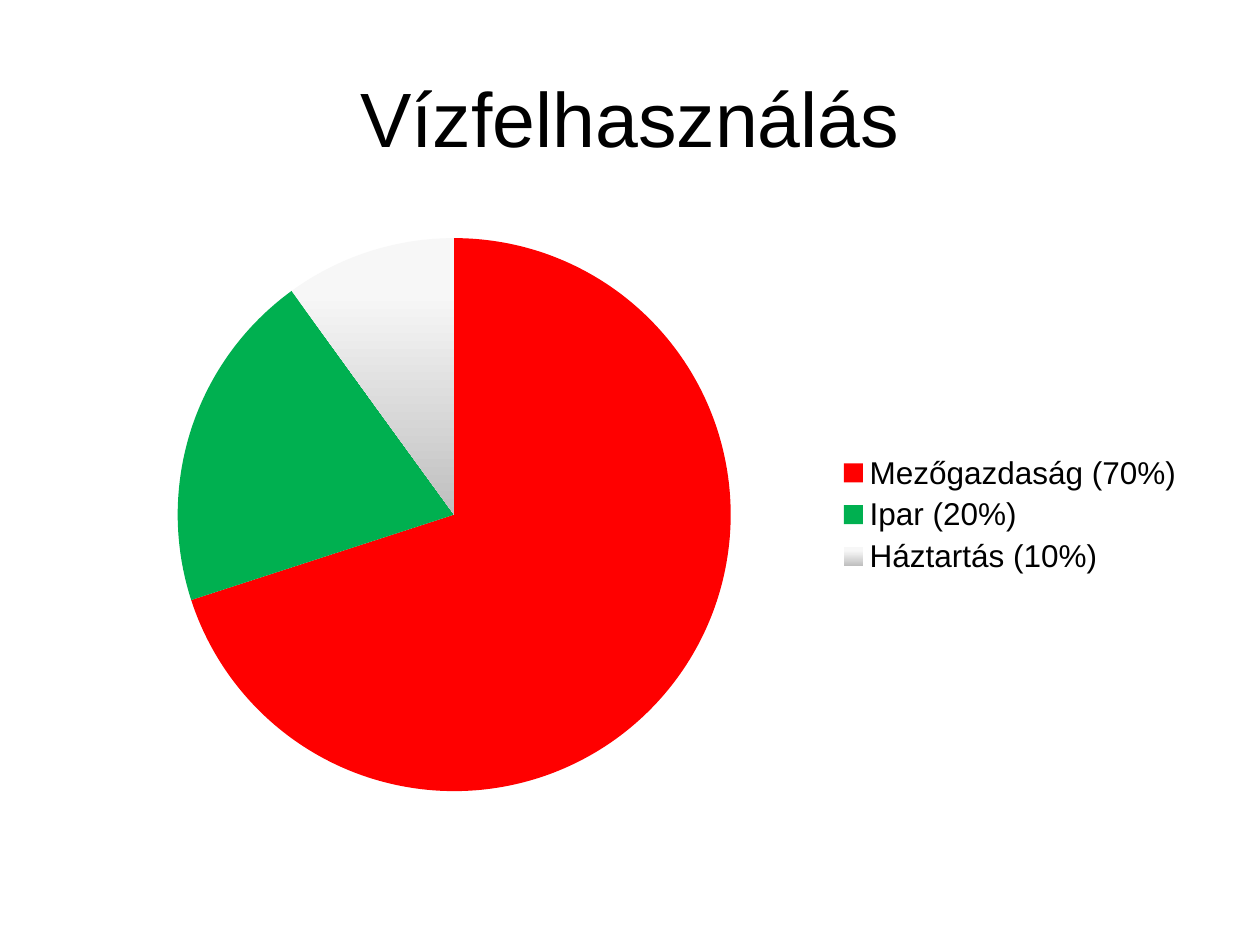
import pptx
import pptx.chart.data
import pptx.dml.color
import pptx.enum.chart
import pptx.enum.text
import pptx.oxml
import pptx.oxml.ns
import pptx.util

Inches = pptx.util.Inches
Pt = pptx.util.Pt

TITLE = "Vízfelhasználás"
FONT = "Arial"
COLORS = {"text": "000000", "farm": "FF0000", "trade": "00B050",
          "light": "F7F7F7", "dark": "BFBFBF"}
# label, value, gradient stops as (position, colour); one stop is a solid fill
USES = [
    ("Mezőgazdaság (70%)", 70, [(0, "farm")]),
    ("Ipar (20%)", 20, [(0, "trade")]),
    ("Háztartás (10%)", 10, [(0.2, "light"), (1, "dark")]),
]
# pie area as fractions of the chart frame
PIE = {"x": 0.1, "y": 0.03, "w": 0.49, "h": 0.94}


def color(name):
    return pptx.dml.color.RGBColor.from_string(COLORS[name])


def style(font, size):
    font.name = FONT
    font.size = Pt(size)
    font.color.rgb = color("text")


def paint(fill, stops):
    if len(stops) == 1:
        fill.solid()
        fill.fore_color.rgb = color(stops[0][1])
        return
    fill.gradient()
    fill.gradient_angle = 270
    for stop, (place, name) in zip(fill.gradient_stops, stops):
        stop.position = place
        stop.color.rgb = color(name)


def set_plot(chart):
    """Fix the inner plot area with a manual layout."""
    qn = pptx.oxml.ns.qn
    area = chart._chartSpace.find(".//" + qn("c:plotArea"))
    for old in area.findall(qn("c:layout")):
        area.remove(old)
    sizes = "".join(f'<c:{key} val="{val}"/>' for key, val in PIE.items())
    area.insert(0, pptx.oxml.parse_xml(
        f'<c:layout {pptx.oxml.ns.nsdecls("c")}><c:manualLayout>'
        '<c:layoutTarget val="inner"/><c:xMode val="edge"/>'
        f'<c:yMode val="edge"/>{sizes}</c:manualLayout></c:layout>'))


def add_title(slide):
    title = slide.shapes.title
    title.left, title.top = Inches(0.5), Inches(0.3)
    title.width, title.height = Inches(9), Inches(1.25)
    frame = title.text_frame
    frame.vertical_anchor = pptx.enum.text.MSO_ANCHOR.MIDDLE
    para = frame.paragraphs[0]
    para.alignment = pptx.enum.text.PP_ALIGN.CENTER
    run = para.add_run()
    run.text = TITLE
    style(run.font, 44)


def add_pie(slide):
    data = pptx.chart.data.CategoryChartData()
    data.categories = [use[0] for use in USES]
    data.add_series("Series 1", [use[1] for use in USES])
    chart = slide.shapes.add_chart(
        pptx.enum.chart.XL_CHART_TYPE.PIE, Inches(0.5), Inches(1.75),
        Inches(9), Inches(4.67), data).chart
    style(chart.font, 18)
    chart.has_title = False
    chart.has_legend = True
    chart.legend.position = pptx.enum.chart.XL_LEGEND_POSITION.RIGHT
    chart.legend.include_in_layout = False
    style(chart.legend.font, 18)
    plot = chart.plots[0]
    plot.vary_by_categories = True
    for num, use in enumerate(USES):
        form = plot.series[0].points[num].format
        paint(form.fill, use[2])
        form.line.fill.background()
    set_plot(chart)


def main():
    deck = pptx.Presentation()
    deck.slide_width, deck.slide_height = Inches(10), Inches(7.5)
    slide = deck.slides.add_slide(deck.slide_layouts[5])
    add_title(slide)
    add_pie(slide)
    deck.save("out.pptx")


if __name__ == "__main__":
    main()
